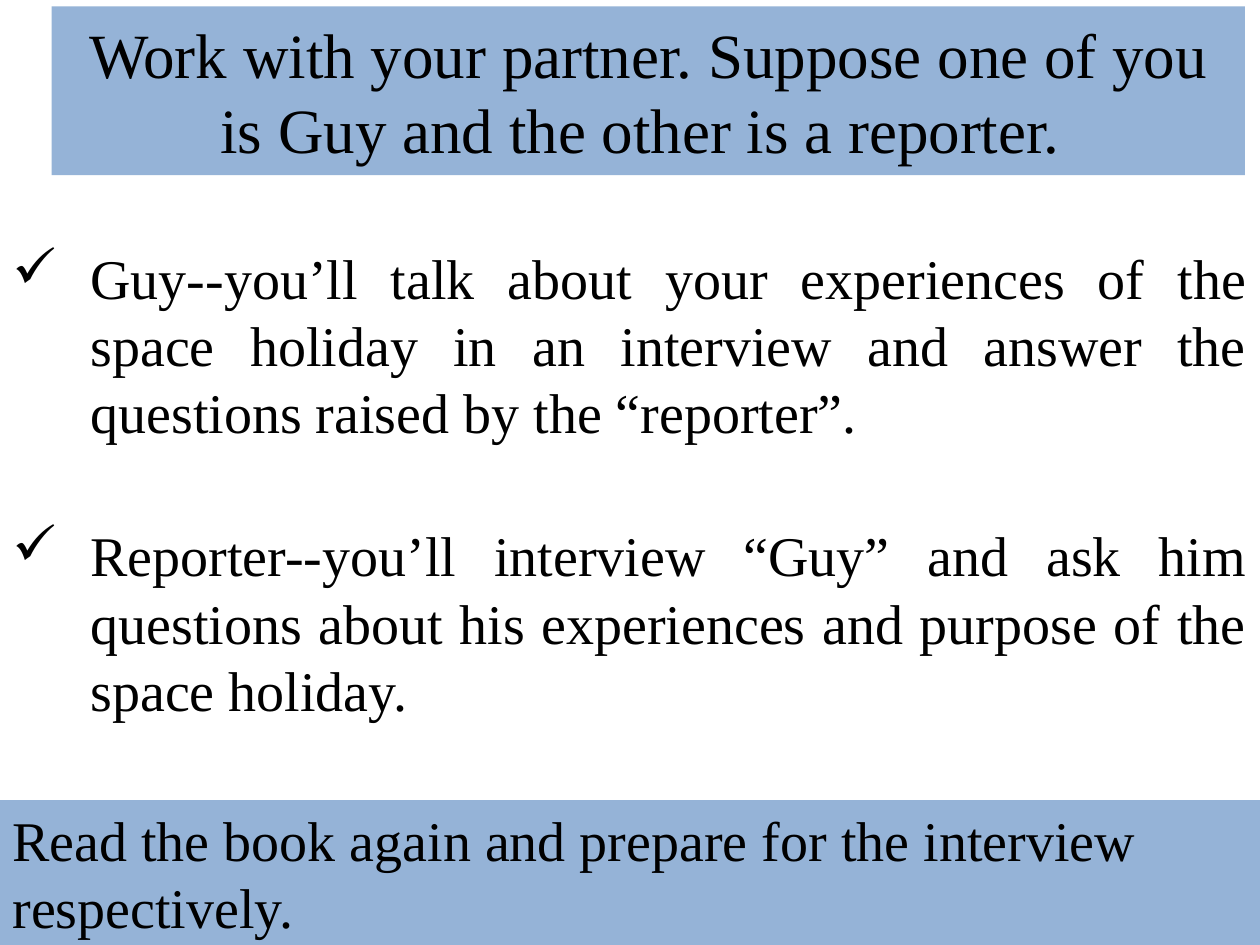
from dataclasses import dataclass
from typing import Optional

from lxml import etree
from pptx import Presentation
from pptx.dml.color import RGBColor
from pptx.enum.shapes import MSO_SHAPE
from pptx.enum.text import MSO_ANCHOR, PP_ALIGN
from pptx.oxml.ns import qn
from pptx.util import Inches, Pt

RECTANGLE = MSO_SHAPE.RECTANGLE
MIDDLE = MSO_ANCHOR.MIDDLE
LEFT, CENTER, JUSTIFY = PP_ALIGN.LEFT, PP_ALIGN.CENTER, PP_ALIGN.JUSTIFY
SLIDE_WIDTH, SLIDE_HEIGHT = Inches(10), Inches(7.5)
BLANK_LAYOUT = 6


@dataclass(frozen=True)
class Theme:
    font: str = "Times New Roman"
    ink: RGBColor = RGBColor(0x00, 0x00, 0x00)
    band: RGBColor = RGBColor(0x95, 0xB3, 0xD7)
    title_size: int = 36
    body_size: int = 32
    bullet_indent: float = 0.62


THEME = Theme()


@dataclass(frozen=True)
class Block:
    text: str
    left: float
    top: float
    width: float
    height: float
    size: int = THEME.body_size
    align: PP_ALIGN = LEFT
    fill: Optional[RGBColor] = None
    bullet: Optional[str] = None


BLOCKS = (
    Block("Work with your partner. Suppose one of you is Guy and the other is a reporter. ",
          0.41 / 10, 0.05 / 7.5, 9.47 / 10, 1.34 / 7.5,
          size=THEME.title_size, align=CENTER, fill=THEME.band),
    Block("Guy--you’ll talk about your experiences of the space holiday in an interview "
          "and answer the questions raised by the “reporter”.",
          0, 1.55 / 7.5, 1, 2.36 / 7.5, align=JUSTIFY, bullet="✓"),
    Block("Reporter--you’ll interview “Guy” and ask him questions about his experiences "
          "and purpose of the space holiday.",
          0, 3.91 / 7.5, 1, 2.05 / 7.5, align=JUSTIFY, bullet="✓"),
    Block("Read the book again and prepare for the interview respectively.",
          0, 6.35 / 7.5, 1, 1.15 / 7.5, fill=THEME.band),
)


def write_text(frame, text: str, *, size: int, align: PP_ALIGN,
               bullet: Optional[str] = None) -> None:
    frame.word_wrap = True
    frame.vertical_anchor = MIDDLE
    paragraph = frame.paragraphs[0]
    paragraph.alignment = align
    run = paragraph.add_run()
    run.text = text
    run.font.name = THEME.font
    run.font.size = Pt(size)
    run.font.color.rgb = THEME.ink
    if bullet:
        indent = Inches(THEME.bullet_indent)
        properties = paragraph._p.get_or_add_pPr()
        properties.set("marL", str(indent))
        properties.set("indent", str(-indent))
        etree.SubElement(properties, qn("a:buChar"), char=bullet)


def draw_block(slide, block: Block) -> None:
    bounds = (round(block.left * SLIDE_WIDTH), round(block.top * SLIDE_HEIGHT),
              round(block.width * SLIDE_WIDTH), round(block.height * SLIDE_HEIGHT))
    if block.fill is None:
        panel = slide.shapes.add_textbox(*bounds)
    else:
        panel = slide.shapes.add_shape(RECTANGLE, *bounds)
        panel.shadow.inherit = False
        panel.fill.solid()
        panel.fill.fore_color.rgb = block.fill
        panel.line.fill.background()
    write_text(panel.text_frame, block.text, size=block.size,
               align=block.align, bullet=block.bullet)


def main() -> None:
    deck = Presentation()
    deck.slide_width, deck.slide_height = SLIDE_WIDTH, SLIDE_HEIGHT
    slide = deck.slides.add_slide(deck.slide_layouts[BLANK_LAYOUT])
    for block in BLOCKS:
        draw_block(slide, block)
    deck.save("out.pptx")


if __name__ == "__main__":
    main()
